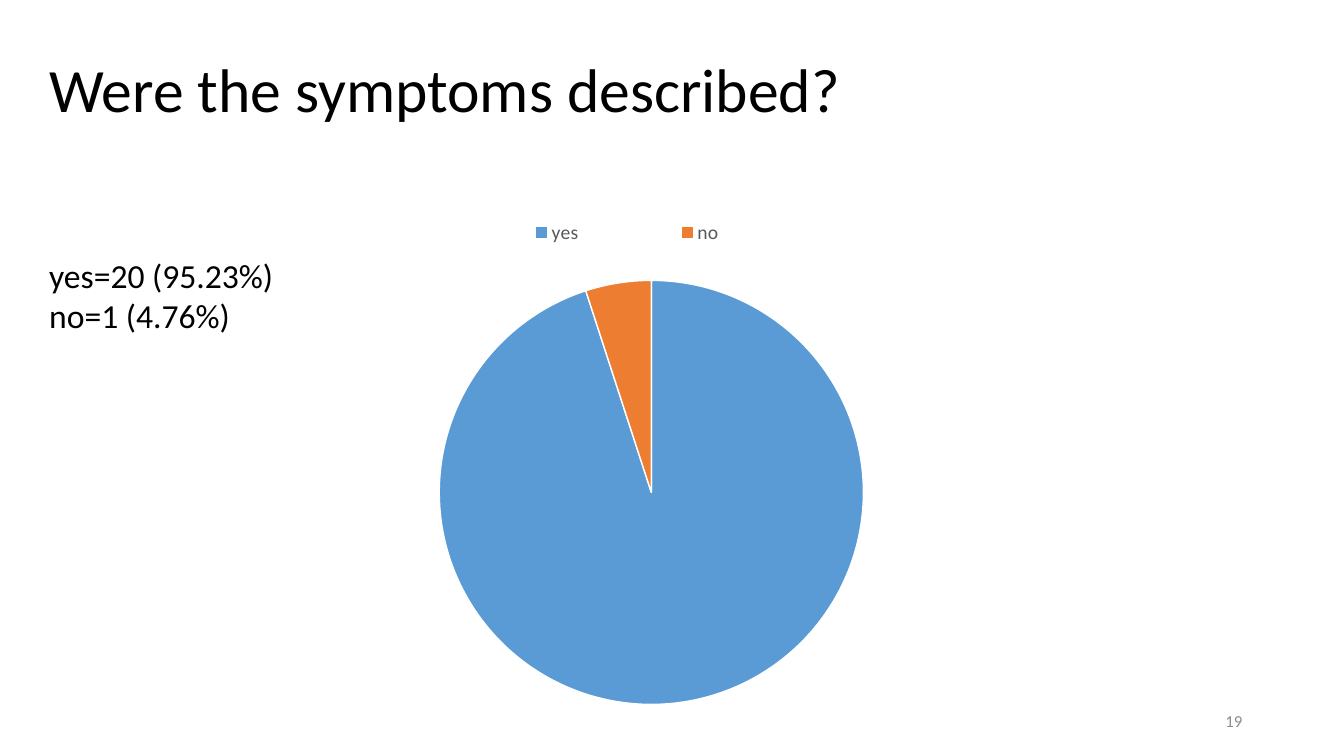
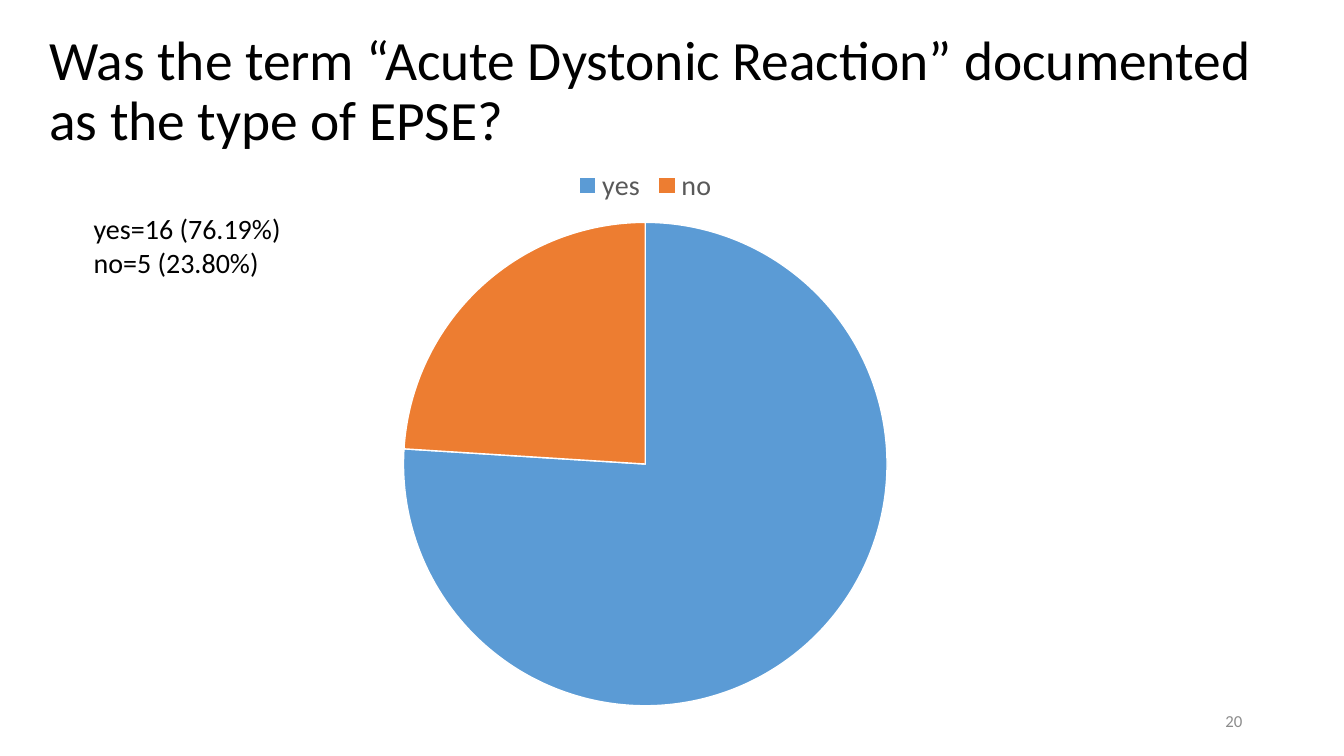
from lxml.etree import SubElement
from pptx import Presentation
from pptx.chart.data import CategoryChartData
from pptx.dml.color import RGBColor
from pptx.enum.chart import XL_CHART_TYPE, XL_LEGEND_POSITION
from pptx.enum.text import MSO_ANCHOR, PP_ALIGN
from pptx.oxml.ns import qn
from pptx.util import Inches, Pt

BLACK = RGBColor(0x00, 0x00, 0x00)
WHITE = RGBColor(0xFF, 0xFF, 0xFF)
LEGEND_GREY = RGBColor(0x59, 0x59, 0x59)
NUMBER_GREY = RGBColor(0x8C, 0x8C, 0x8C)
ANSWER_COLORS = {"yes": RGBColor(0x5B, 0x9B, 0xD5), "no": RGBColor(0xED, 0x7D, 0x31)}
FONT = "Calibri"
MARGIN, CONTENT_WIDTH = 0.39, 12.02

QUESTIONS = [
    {
        "title": "Were the symptoms described?",
        "title_size": 44,
        "title_width": CONTENT_WIDTH,
        "counts": ["yes=20 (95.23%)", "no=1 (4.76%)"],
        "counts_box": (MARGIN, 2.48, 3.56, 1.08),
        "counts_size": 24,
        "shares": (95, 5),
        "pie_box": (MARGIN, 1.8, CONTENT_WIDTH, 5.32),
        "legend_size": 14,
        "pie_area": (0.33, 0.18, 0.35, 0.8),
        "legend_area": (0.33, 0.05, 0.31, 0.09),
        "number": "19",
    },
    {
        "title": "Was the term “Acute Dystonic Reaction” documented as the type of EPSE?",
        "title_size": 39.6,
        "title_width": 12.2,
        "counts": ["yes=16 (76.19%)", "no=5 (23.80%)"],
        "counts_box": (0.83, 2.05, 3.05, 1.7),
        "counts_size": 20,
        "shares": (76, 24),
        "pie_box": (MARGIN, 1.54, CONTENT_WIDTH, 5.6),
        "legend_size": 20,
        "pie_area": None,
        "legend_area": None,
        "number": "20",
    },
]


def style_font(font, size, color):
    for attribute, value in {"name": FONT, "size": Pt(size)}.items():
        setattr(font, attribute, value)
    font.color.rgb = color


def add_text(slide, box, lines, size, color=BLACK, anchor=MSO_ANCHOR.TOP, **paragraph_format):
    frame = slide.shapes.add_textbox(*map(Inches, box)).text_frame
    frame.word_wrap = True
    frame.vertical_anchor = anchor
    frame.text = "\n".join(lines)
    for paragraph in frame.paragraphs:
        for attribute, value in paragraph_format.items():
            setattr(paragraph, attribute, value)
        for run in paragraph.runs:
            style_font(run.font, size, color)


def place_part(part, area, position, inner=False):
    """Give a chart part a fixed area, as fractions of the chart."""
    for old_layout in part.findall(qn("c:layout")):
        part.remove(old_layout)
    layout = SubElement(part, qn("c:layout"))
    part.insert(position, layout)
    manual = SubElement(layout, qn("c:manualLayout"))
    settings = [("layoutTarget", "inner")] if inner else []
    settings += [("xMode", "edge"), ("yMode", "edge"), *zip("xywh", area)]
    for tag, value in settings:
        SubElement(manual, qn(f"c:{tag}")).set("val", str(value))


def add_answer_pie(slide, question):
    answers = CategoryChartData()
    answers.categories = list(ANSWER_COLORS)
    answers.add_series("Series 1", question["shares"])
    pie = slide.shapes.add_chart(
        XL_CHART_TYPE.PIE, *map(Inches, question["pie_box"]), answers
    ).chart
    pie.has_title = False
    style_font(pie.font, 14, BLACK)

    # Slices
    pie.plots[0].vary_by_categories = True
    for index, color in enumerate(ANSWER_COLORS.values()):
        slice_format = pie.plots[0].series[0].points[index].format
        slice_format.fill.solid()
        slice_format.fill.fore_color.rgb = color
        slice_format.line.color.rgb = WHITE
        slice_format.line.width = Pt(1)

    # Legend
    pie.has_legend = True
    pie.legend.position = XL_LEGEND_POSITION.TOP
    pie.legend.include_in_layout = False
    style_font(pie.legend.font, question["legend_size"], LEGEND_GREY)

    # Fixed areas
    chart_xml = pie.element.find(qn("c:chart"))
    if question["pie_area"]:
        place_part(chart_xml.find(qn("c:plotArea")), question["pie_area"], 0, inner=True)
    if question["legend_area"]:
        place_part(chart_xml.find(qn("c:legend")), question["legend_area"], 1)


def add_question_slide(deck, question):
    slide = deck.slides.add_slide(deck.slide_layouts[6])
    add_text(slide, (MARGIN, 0.29, question["title_width"], 1.25), [question["title"]],
             question["title_size"], anchor=MSO_ANCHOR.MIDDLE, line_spacing=0.9)
    add_answer_pie(slide, question)
    add_text(slide, question["counts_box"], question["counts"], question["counts_size"])
    add_text(slide, (9.42, 6.95, 3, 0.4), [question["number"]], 12, NUMBER_GREY,
             MSO_ANCHOR.MIDDLE, alignment=PP_ALIGN.RIGHT)


def main():
    deck = Presentation()
    deck.slide_width, deck.slide_height = Inches(13.33), Inches(7.5)
    for question in QUESTIONS:
        add_question_slide(deck, question)
    deck.save("out.pptx")


if __name__ == "__main__":
    main()
